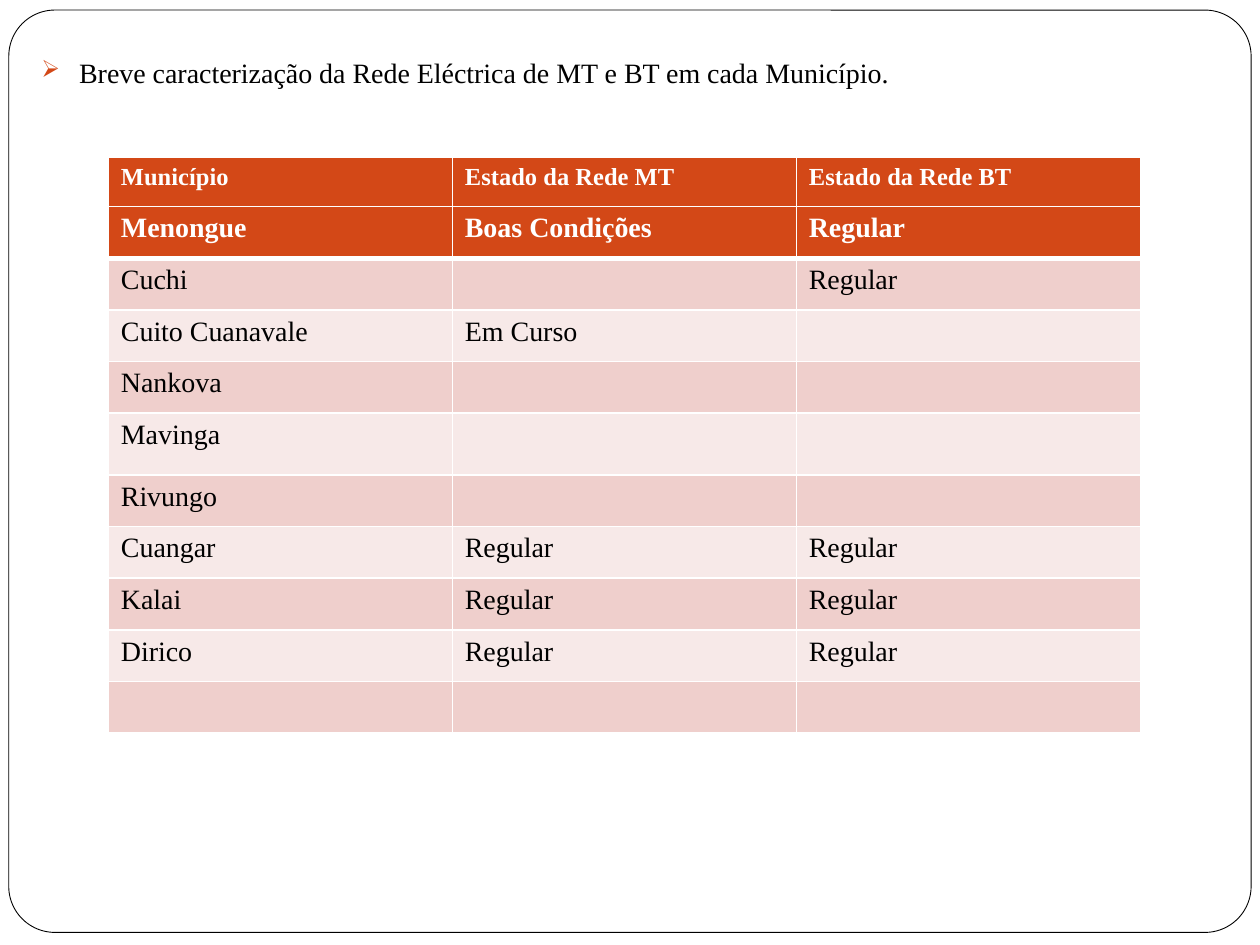
import pptx
import pptx.dml.color
import pptx.enum.shapes
import pptx.oxml
import pptx.oxml.ns
import pptx.util
from pptx.util import Inches

FONT = "Times New Roman"
ACCENT, WHITE, BLACK = "D34817", "FFFFFF", "000000"
BANDS = ("EFCFCC", "F7E9E8")
LEFT, COLUMN_WIDTH, ROW_HEIGHT = 0.86, 2.73, 0.41
HEADINGS = ("Município", "Estado da Rede MT", "Estado da Rede BT")
NETWORKS = (
    ("Menongue", "Boas Condições", "Regular"),
    ("Cuchi", "", "Regular"),
    ("Cuito Cuanavale", "Em Curso", ""),
    ("Nankova", "", ""),
    ("Mavinga", "", ""),
    ("Rivungo", "", ""),
    ("Cuangar", "Regular", "Regular"),
    ("Kalai", "Regular", "Regular"),
    ("Dirico", "Regular", "Regular"),
    ("", "", ""),
)


def color(value):
    """Turn a hex string into a colour."""
    return pptx.dml.color.RGBColor.from_string(value)


def add_run(paragraph, text, size, text_color, bold=False):
    """Append one formatted run to a paragraph."""
    run = paragraph.add_run()
    run.text = text
    run.font.name = FONT
    run.font.size = pptx.util.Pt(size)
    run.font.bold = bold
    run.font.color.rgb = color(text_color)


def add_frame(slide):
    """Draw the rounded outline around the slide."""
    shape = slide.shapes.add_shape(
        pptx.enum.shapes.MSO_SHAPE.ROUNDED_RECTANGLE,
        Inches(0.07), Inches(0.08), Inches(9.86), Inches(7.32))
    shape.adjustments[0] = 0.05
    shape.shadow.inherit = False
    shape.fill.solid()
    shape.fill.fore_color.rgb = color(WHITE)
    shape.line.color.rgb = color(BLACK)
    shape.line.width = pptx.util.Pt(0.5)


def add_bullet(paragraph, character, bullet_color, percent):
    """Give a paragraph a hanging bullet."""
    properties = paragraph._p.get_or_add_pPr()
    properties.set("marL", str(Inches(0.3)))
    properties.set("indent", str(Inches(-0.3)))
    namespace = pptx.oxml.ns.nsdecls("a")
    for xml in (
        f'<a:buClr {namespace}><a:srgbClr val="{bullet_color}"/></a:buClr>',
        f'<a:buSzPct {namespace} val="{percent * 1000}"/>',
        f'<a:buChar {namespace} char="{character}"/>',
    ):
        properties.append(pptx.oxml.parse_xml(xml))


def add_statement(slide, text):
    """Add the bulleted statement above the table."""
    shape = slide.shapes.add_textbox(Inches(0.23), Inches(0.39), Inches(9.13), Inches(5))
    shape.text_frame.word_wrap = True
    paragraph = shape.text_frame.paragraphs[0]
    paragraph.space_before = pptx.util.Pt(5.8)
    add_bullet(paragraph, "➢", ACCENT, 85)
    add_run(paragraph, text, 16, BLACK)


def set_borders(cell, bottom_width):
    """Draw white borders, one point wide except at the bottom."""
    properties = cell._tc.get_or_add_tcPr()
    widths = {"lnL": 1, "lnR": 1, "lnT": 1, "lnB": bottom_width}
    for position, (side, width) in enumerate(widths.items()):
        properties.insert(position, pptx.oxml.parse_xml(
            f'<a:{side} {pptx.oxml.ns.nsdecls("a")} w="{pptx.util.Pt(width)}">'
            f'<a:solidFill><a:srgbClr val="{WHITE}"/></a:solidFill></a:{side}>'))


def fill_cell(cell, text, size, header, band):
    """Set the fill, borders and text of one cell."""
    cell.fill.solid()
    cell.fill.fore_color.rgb = color(ACCENT if header else band)
    set_borders(cell, 3 if header else 1)
    paragraph = cell.text_frame.paragraphs[0]
    if text:
        add_run(paragraph, text, size, WHITE if header else BLACK, header)
    else:
        paragraph.font.size = pptx.util.Pt(size)


def add_grid(slide, left, top, rows, size):
    """Add a table whose first row is a header."""
    columns = len(rows[0])
    table = slide.shapes.add_table(
        len(rows), columns, Inches(left), Inches(top),
        Inches(COLUMN_WIDTH * columns), Inches(ROW_HEIGHT * len(rows))).table
    for column in table.columns:
        column.width = Inches(COLUMN_WIDTH)
    for row_index, values in enumerate(rows):
        table.rows[row_index].height = Inches(ROW_HEIGHT)
        for column_index, text in enumerate(values):
            fill_cell(table.cell(row_index, column_index), text, size,
                      row_index == 0, BANDS[(row_index - 1) % 2])
    return table


def main():
    """Build and save the slide."""
    presentation = pptx.Presentation()
    presentation.slide_width, presentation.slide_height = Inches(10), Inches(7.5)
    slide = presentation.slides.add_slide(presentation.slide_layouts[6])
    add_frame(slide)
    add_statement(slide, "Breve caracterização da Rede Eléctrica de MT e BT em cada Município.")
    for index, heading in enumerate(HEADINGS):
        add_grid(slide, LEFT + index * COLUMN_WIDTH, 1.25, [[heading]], 14)
    table = add_grid(slide, LEFT, 1.64, NETWORKS, 16)
    table.rows[4].height = Inches(0.49)
    presentation.save("out.pptx")


if __name__ == "__main__":
    main()
